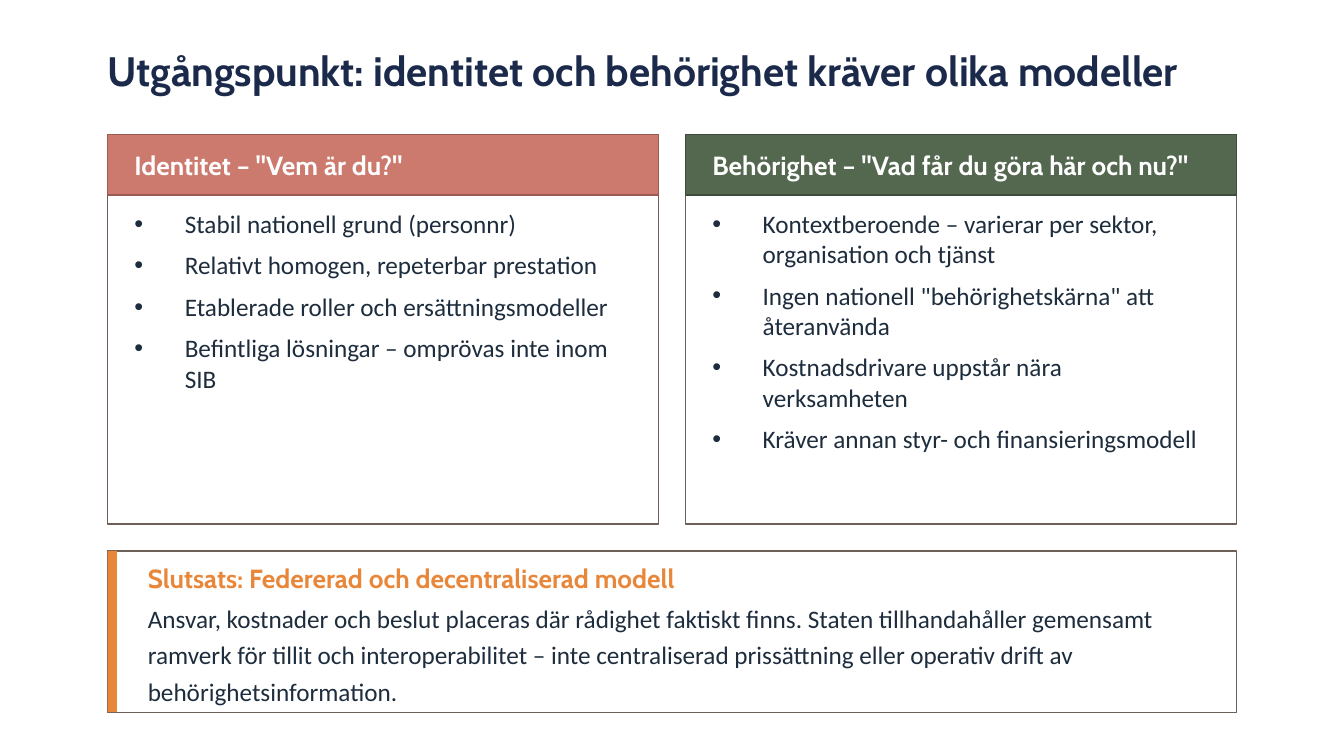
from typing import NamedTuple

from lxml import etree
from pptx import Presentation
from pptx.dml.color import RGBColor
from pptx.enum.shapes import MSO_SHAPE
from pptx.enum.text import MSO_ANCHOR as Anchor
from pptx.oxml.ns import qn
from pptx.util import Emu, Inches, Pt

PX = 12192  # EMU per px: the slide is 1000 px wide

COLORS = {
    "navy": "1B2A4A",
    "ink": "1E2D3D",
    "white": "FFFFFF",
    "border": "6D6059",
    "rose": "CD7A6E",
    "rose_dark": "985A51",
    "green": "546850",
    "green_dark": "3E4D3B",
    "orange": "E8873A",
}
HEADING_FONT, BODY_FONT = "Cabin", "Calibri"
HEADING_SIZE, BODY_SIZE = 18.7, 18

# Layout in px
LEFT, WIDTH = 80, 1120 - 280
CARD_TOP, CARD_W, CARD_H, GAP = 100, 410, 290, 20
HEADER_H, PAD = 45, 20
BOX_TOP, BOX_H, BOX_PAD = 410, 120, 30


class Box(NamedTuple):
    x: int
    y: int
    w: int
    h: int


class Card(NamedTuple):
    title: str
    fill: str
    line: str
    points: list[str]


CARDS = [
    Card('Identitet – "Vem är du?"', "rose", "rose_dark", [
        "Stabil nationell grund (personnr)",
        "Relativt homogen, repeterbar prestation",
        "Etablerade roller och ersättningsmodeller",
        "Befintliga lösningar – omprövas inte inom SIB",
    ]),
    Card('Behörighet – "Vad får du göra här och nu?"', "green", "green_dark", [
        "Kontextberoende – varierar per sektor, organisation och tjänst",
        'Ingen nationell "behörighetskärna" att återanvända',
        "Kostnadsdrivare uppstår nära verksamheten",
        "Kräver annan styr- och finansieringsmodell",
    ]),
]


def rgb(name: str) -> RGBColor:
    return RGBColor.from_string(COLORS[name])


def emu(box: Box) -> list[Emu]:
    return [Emu(v * PX) for v in box]


def add_rect(slide, box: Box, fill: str, line: str | None = None) -> None:
    s = slide.shapes.add_shape(MSO_SHAPE.RECTANGLE, *emu(box))
    s.shadow.inherit = False
    s.fill.solid()
    s.fill.fore_color.rgb = rgb(fill)
    if line:
        s.line.color.rgb = rgb(line)
        s.line.width = Pt(1)
    else:
        s.line.fill.background()


def add_bullet(p) -> None:
    pPr = p._p.get_or_add_pPr()
    pPr.set("marL", str(Inches(0.5)))
    pPr.set("indent", str(-Inches(0.5)))
    etree.SubElement(pPr, qn("a:buFont")).set("typeface", "Arial")
    etree.SubElement(pPr, qn("a:buChar")).set("char", "•")


def add_text(slide, box: Box, *paragraphs: str, font: str = BODY_FONT,
             size: float = BODY_SIZE, color: str = "ink", bold: bool = False,
             anchor: Anchor = Anchor.MIDDLE, bullets: bool = False,
             spacing: float | None = None) -> None:
    tf = slide.shapes.add_textbox(*emu(box)).text_frame
    tf.word_wrap = True
    tf.vertical_anchor = anchor
    tf.margin_left = tf.margin_right = tf.margin_top = tf.margin_bottom = 0
    for i, text in enumerate(paragraphs):
        p = tf.add_paragraph() if i else tf.paragraphs[0]
        if bullets:
            add_bullet(p)
            p.space_after = Pt(8)
        if spacing:
            p.line_spacing = spacing
        r = p.add_run()
        r.text = text
        r.font.name, r.font.size, r.font.bold = font, Pt(size), bold
        r.font.color.rgb = rgb(color)


def add_heading(slide, box: Box, text: str, color: str,
                size: float = HEADING_SIZE) -> None:
    add_text(slide, box, text, font=HEADING_FONT, size=size, color=color, bold=True)


def add_card(slide, x: int, card: Card) -> None:
    text_x, text_w = x + PAD, CARD_W - 2 * PAD
    add_rect(slide, Box(x, CARD_TOP, CARD_W, CARD_H), "white", "border")
    add_rect(slide, Box(x, CARD_TOP, CARD_W, HEADER_H), card.fill, card.line)
    add_heading(slide, Box(text_x, CARD_TOP + 5, text_w, HEADER_H - 10),
                card.title, "white")
    add_text(slide, Box(text_x, CARD_TOP + HEADER_H + 10, text_w, 220),
             *card.points, anchor=Anchor.TOP, bullets=True)


def add_conclusion(slide) -> None:
    text_x, text_w = LEFT + BOX_PAD, WIDTH - 2 * BOX_PAD
    add_rect(slide, Box(LEFT, BOX_TOP, WIDTH, BOX_H), "white", "border")
    add_rect(slide, Box(LEFT, BOX_TOP, 7, BOX_H), "orange")
    add_heading(slide, Box(text_x, BOX_TOP + 5, text_w, 30),
                "Slutsats: Federerad och decentraliserad modell", "orange")
    add_text(slide, Box(text_x, BOX_TOP + 40, text_w, 70),
             "Ansvar, kostnader och beslut placeras där rådighet faktiskt finns. "
             "Staten tillhandahåller gemensamt ramverk för tillit och "
             "interoperabilitet – inte centraliserad prissättning eller operativ "
             "drift av behörighetsinformation.", spacing=1.2)


def main() -> None:
    prs = Presentation()
    prs.slide_width, prs.slide_height = Emu(1000 * PX), Inches(7.5)
    slide = prs.slides.add_slide(prs.slide_layouts[6])

    # Title
    add_heading(slide, Box(LEFT, 25, 900, 55),
                "Utgångspunkt: identitet och behörighet kräver olika modeller",
                "navy", size=29.3)

    # Two cards side by side
    for i, card in enumerate(CARDS):
        add_card(slide, LEFT + i * (CARD_W + GAP), card)

    # Conclusion below
    add_conclusion(slide)

    prs.save("out.pptx")


if __name__ == "__main__":
    main()
